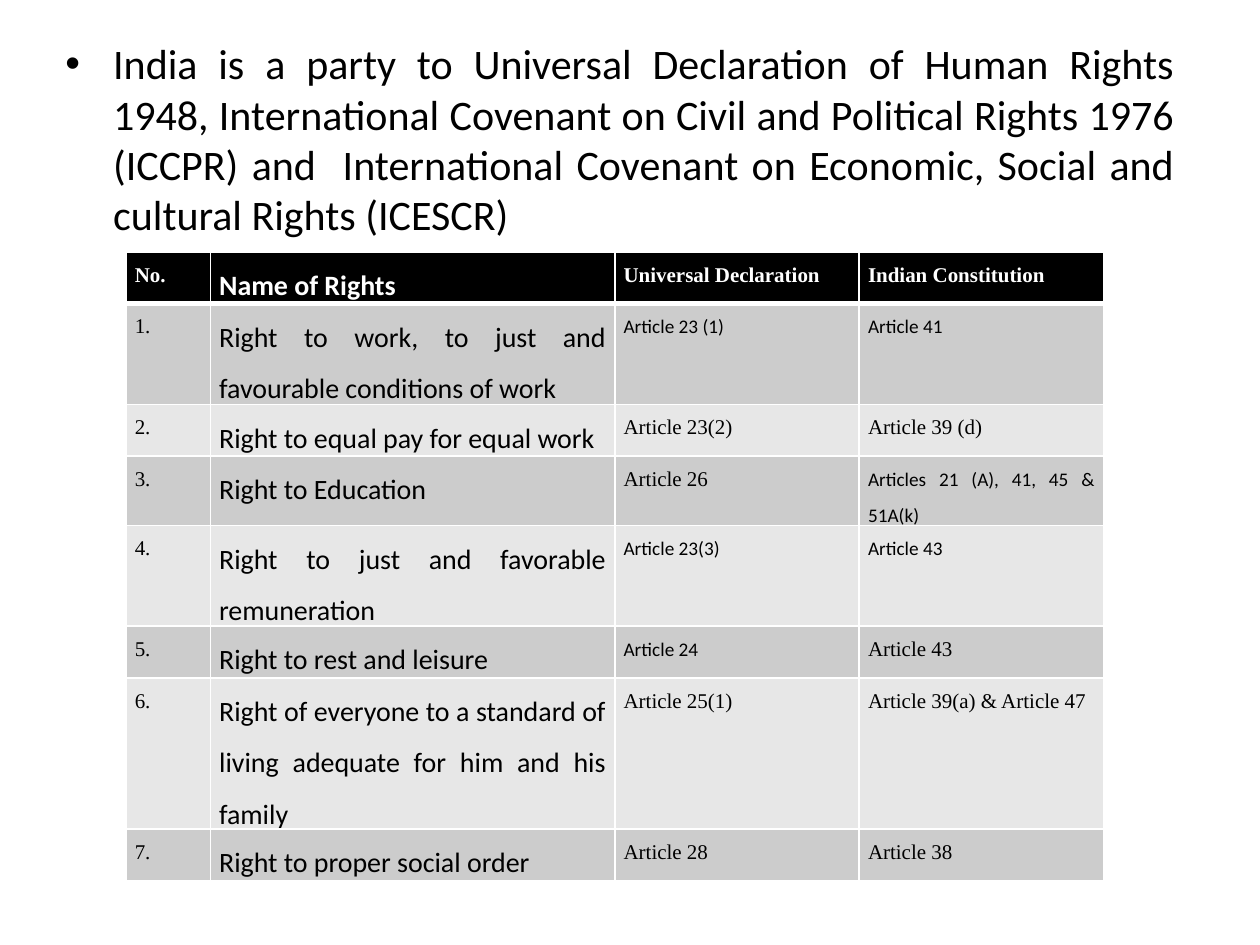
from dataclasses import dataclass

from lxml.etree import SubElement
from pptx import Presentation
from pptx.dml.color import RGBColor as Color
from pptx.enum.text import PP_ALIGN as Align
from pptx.oxml import parse_xml
from pptx.oxml.ns import nsdecls, qn
from pptx.util import Inches, Pt


@dataclass(frozen=True)
class Theme:
    """Colours, fonts and type sizes of the slide."""
    black: str = "000000"
    white: str = "FFFFFF"
    bands: tuple = ("CCCCCC", "E7E7E7")
    intro: tuple = ("Calibri", 24)
    right: tuple = ("Calibri", 16)
    article: tuple = ("Times New Roman", 12)
    small: tuple = ("Calibri", 11)


THEME = Theme()
INTRO = (
    "India is a party to Universal Declaration of Human Rights 1948, "
    "International Covenant on Civil and Political Rights 1976 (ICCPR) and  "
    "International Covenant on Economic, Social and cultural Rights (ICESCR)"
)
HEADINGS = ("No.", "Name of Rights", "Universal Declaration", "Indian Constitution")
RIGHTS = (
    ("Right to work, to just and favourable conditions of work", "Article 23 (1)", "Article 41 "),
    ("Right to equal pay for equal work", "Article 23(2)", "Article 39 (d)"),
    ("Right to Education", "Article 26", "Articles 21 (A), 41, 45 & 51A(k)"),
    ("Right to just and favorable remuneration", "Article 23(3) ", "Article 43"),
    ("Right to rest and leisure", "Article 24", "Article 43"),
    ("Right of everyone to a standard of living adequate for him and his family",
     "Article 25(1)", "Article 39(a) & Article 47"),
    ("Right to proper social order", "Article 28", "Article 38"),
)
SMALL_CELLS = {(1, 2), (1, 3), (3, 3), (4, 2), (4, 3), (5, 2)}
COLUMN_WIDTHS = (0.67, 3.21, 1.94, 1.94)
ROW_HEIGHT = 0.41
HANGING = 0.38


def style_paragraph(para, text, face, color, bold=False):
    """Fill a paragraph with justified text in one face."""
    para.text = text
    para.alignment = Align.JUSTIFY
    para.font.name, size = face
    para.font.size = Pt(size)
    para.font.bold = bold
    para.font.color.rgb = Color.from_string(color)


def hang_indent(para):
    """Give a paragraph a hanging indent and return its properties."""
    properties = para._p.get_or_add_pPr()
    properties.set("marL", str(Inches(HANGING)))
    properties.set("indent", str(-Inches(HANGING)))
    return properties


def add_bullet_text(page, text):
    """Add the bulleted introduction."""
    box = page.shapes.add_textbox(Inches(0.42), Inches(0.25), Inches(9), Inches(6.58))
    box.text_frame.word_wrap = True
    para = box.text_frame.paragraphs[0]
    style_paragraph(para, text, THEME.intro, THEME.black)
    para.space_before = Pt(THEME.intro[1] * 0.2)
    properties = hang_indent(para)
    SubElement(properties, qn("a:buFont")).set("typeface", "Arial")
    SubElement(properties, qn("a:buChar")).set("char", "•")


def set_borders(cell, top, bottom):
    """Draw white cell borders, with widths in points for top and bottom."""
    properties = cell._tc.get_or_add_tcPr()
    widths = {"lnL": 1, "lnR": 1, "lnT": top, "lnB": bottom}
    for place, (side, width) in enumerate(widths.items()):
        line = parse_xml(
            f'<a:{side} {nsdecls("a")} w="{Pt(width)}"><a:solidFill>'
            f'<a:srgbClr val="{THEME.white}"/></a:solidFill></a:{side}>'
        )
        properties.insert(place, line)


def cell_face(row, column):
    """Choose the font and size of a table cell."""
    if column == 1:
        return THEME.right
    return THEME.small if (row, column) in SMALL_CELLS else THEME.article


def fill_cell(cell, text, row, column):
    """Write and colour one table cell."""
    header = row == 0
    cell.margin_left = cell.margin_right = Inches(0.07)
    cell.margin_top = cell.margin_bottom = 0
    cell.fill.solid()
    fill = THEME.black if header else THEME.bands[(row - 1) % 2]
    cell.fill.fore_color.rgb = Color.from_string(fill)
    para = cell.text_frame.paragraphs[0]
    color = THEME.white if header else THEME.black
    style_paragraph(para, text, cell_face(row, column), color, header)
    para.line_spacing = 1.5
    if column == 0 and not header:
        hang_indent(para)
    set_borders(cell, 3 if row == 1 else 1, 3 if header else 1)


def add_rights_table(page):
    """Add the table that matches rights with articles."""
    records = [HEADINGS]
    records += [(f"{number}.", *right) for number, right in enumerate(RIGHTS, 1)]
    table = page.shapes.add_table(
        len(records), len(HEADINGS), Inches(1), Inches(2),
        Inches(sum(COLUMN_WIDTHS)), Inches(ROW_HEIGHT * len(records)),
    ).table
    for column, width in zip(table.columns, COLUMN_WIDTHS):
        column.width = Inches(width)
    for row, record in enumerate(records):
        table.rows[row].height = Inches(ROW_HEIGHT)
        for column, text in enumerate(record):
            fill_cell(table.cell(row, column), text, row, column)


def main():
    """Build and save the slide."""
    deck = Presentation()
    deck.slide_width, deck.slide_height = Inches(10), Inches(7.5)
    page = deck.slides.add_slide(deck.slide_layouts[6])
    add_bullet_text(page, INTRO)
    add_rights_table(page)
    deck.save("out.pptx")


if __name__ == "__main__":
    main()
